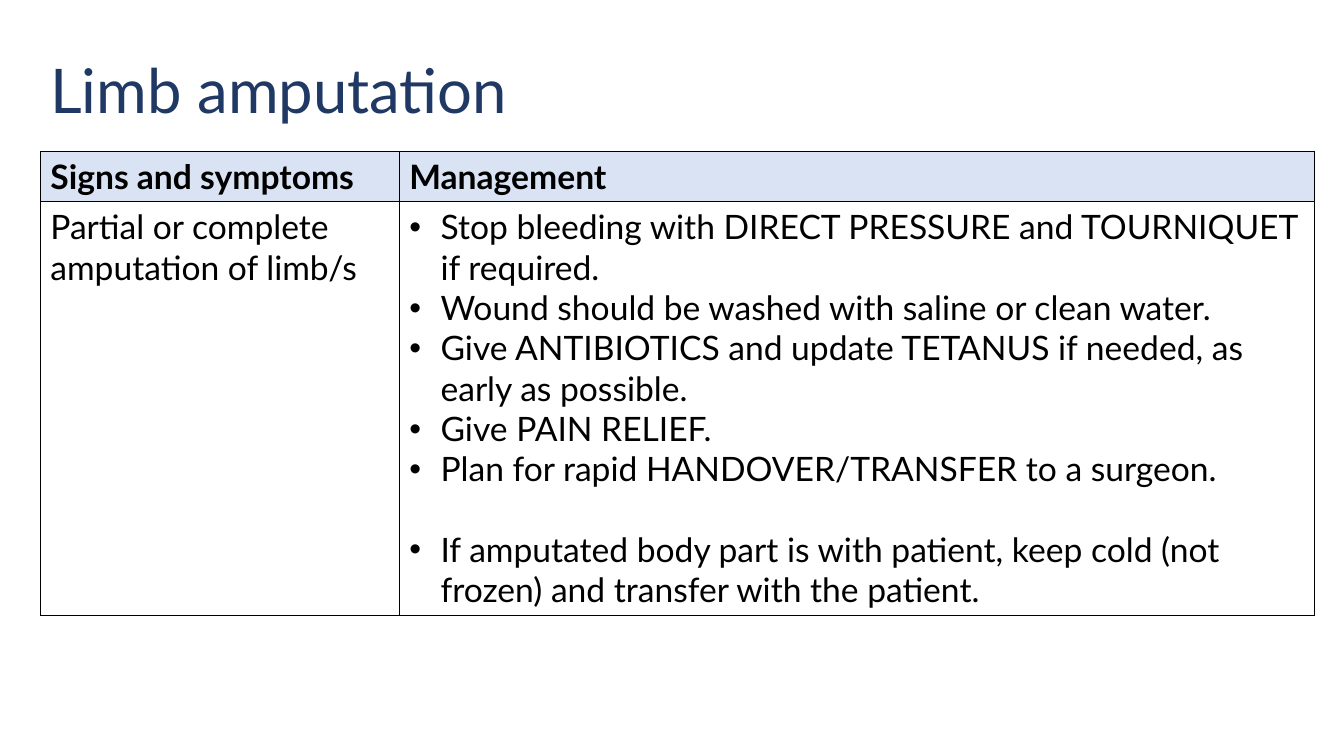
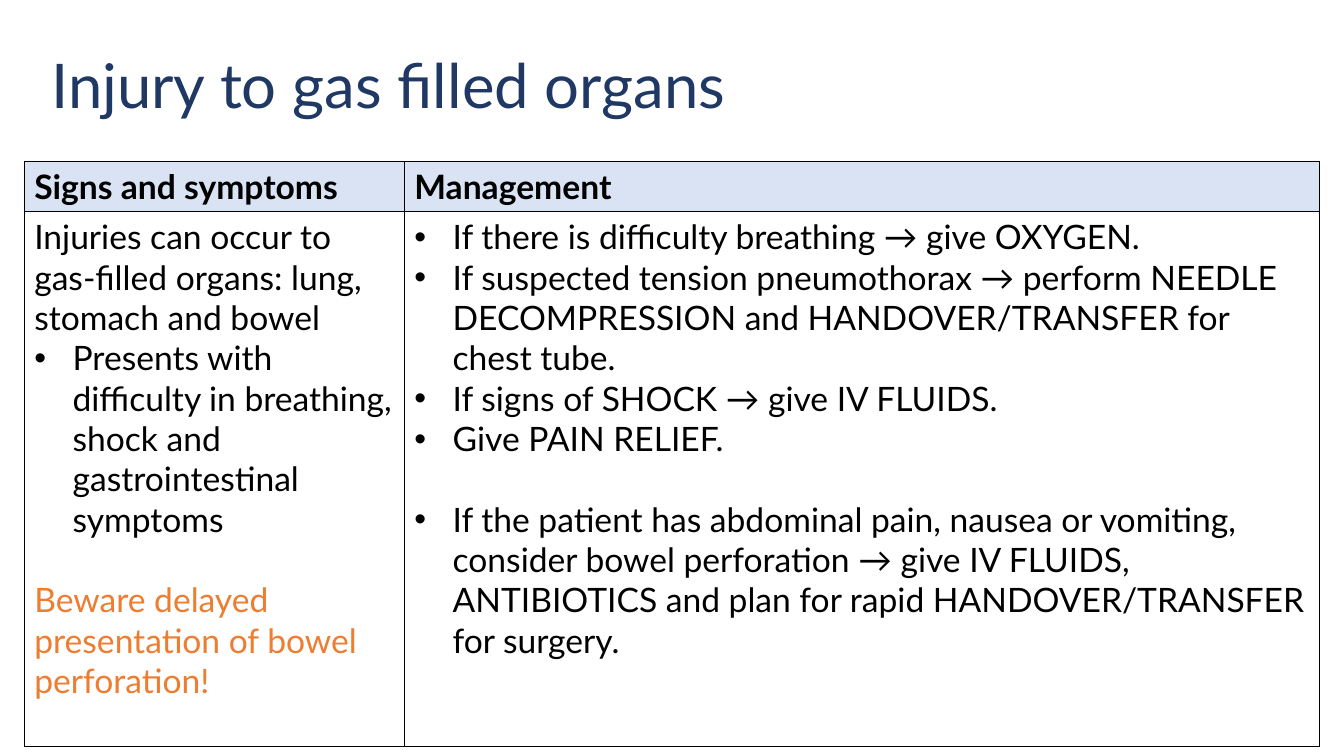
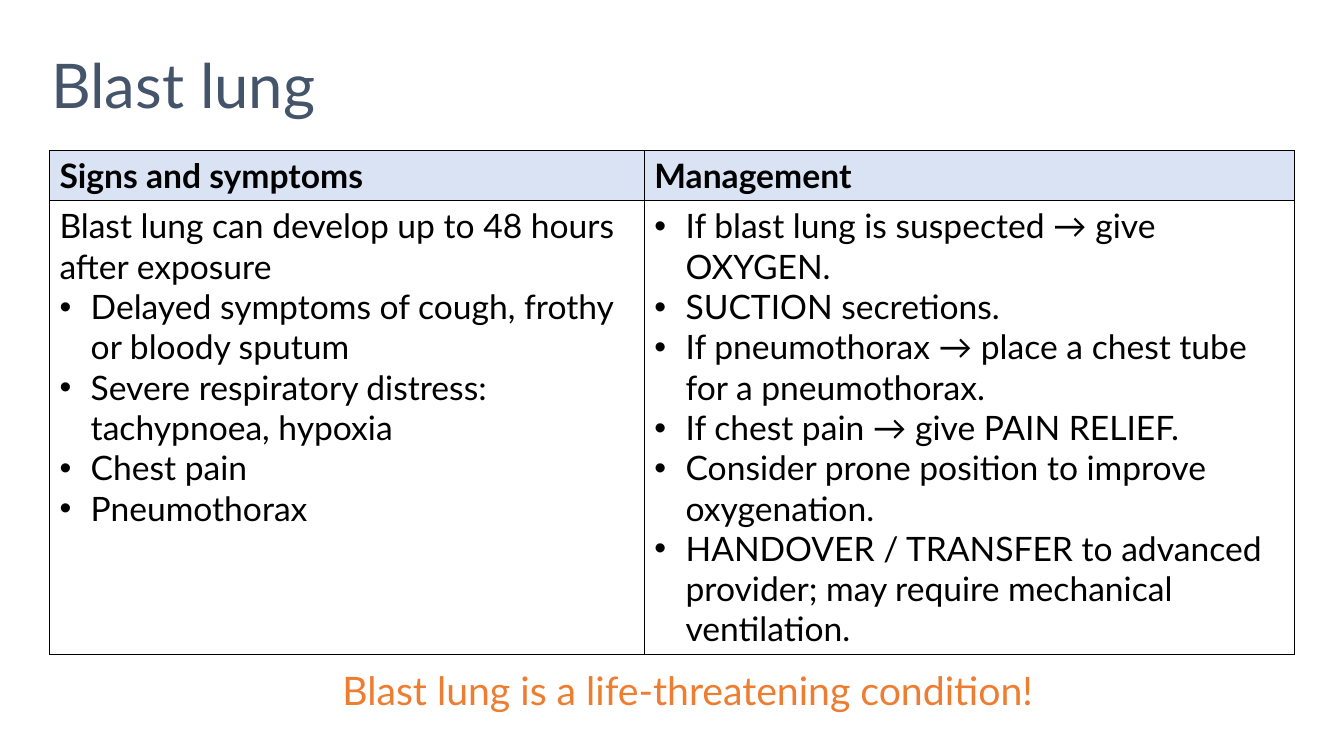
"""Builds three slides on blast injuries: signs, symptoms and management."""
from lxml.etree import SubElement
from pptx import Presentation
from pptx.dml.color import RGBColor
from pptx.enum.text import MSO_ANCHOR, PP_ALIGN
from pptx.oxml.ns import qn
from pptx.util import Inches, Pt

FONT = "Lato"
BLACK, NAVY, SLATE, ORANGE = "000000", "203864", "44546A", "ED7D31"
HEADER_FILL = "DAE3F3"
BODY_SIZE = 24
BLANK_LINE = Pt(BODY_SIZE * 1.2)
HEADER_HEIGHT = 0.5
HEADERS = ("Signs and symptoms", "Management")
PLAIN, BULLET, SPACED_BULLET, WARNING = range(4)

SLIDES = [
    {
        "title": "Limb amputation", "title_at": (0.4, 0.2), "title_color": NAVY,
        "table_at": (0.4, 1.5), "columns": (3.56, 9.08), "height": 4.6, "indent": 0.31,
        "cells": (
            [("Partial or complete amputation of limb/s", PLAIN)],
            [
                ("Stop bleeding with DIRECT PRESSURE and TOURNIQUET if required.", BULLET),
                ("Wound should be washed with saline or clean water.", BULLET),
                ("Give ANTIBIOTICS and update TETANUS if needed, as early as possible.", BULLET),
                ("Give PAIN RELIEF.", BULLET),
                ("Plan for rapid HANDOVER/TRANSFER to a surgeon.", BULLET),
                ("If amputated body part is with patient, keep cold (not frozen) "
                 "and transfer with the patient.", SPACED_BULLET),
            ],
        ),
    },
    {
        "title": "Injury to gas filled organs", "title_at": (0.41, 0.15), "title_color": NAVY,
        "table_at": (0.24, 1.6), "columns": (3.77, 9.08), "height": 5.8, "indent": 0.38,
        "cells": (
            [
                ("Injuries can occur to gas-filled organs: lung, stomach and bowel", PLAIN),
                ("Presents with difficulty in breathing, shock and gastrointestinal symptoms", BULLET),
                ("Beware delayed presentation of bowel perforation!", WARNING),
            ],
            [
                ("If there is difficulty breathing → give OXYGEN.", BULLET),
                ("If suspected tension pneumothorax → perform NEEDLE DECOMPRESSION "
                 "and HANDOVER/TRANSFER for chest tube.", BULLET),
                ("If signs of SHOCK → give IV FLUIDS.", BULLET),
                ("Give PAIN RELIEF.", BULLET),
                ("If the patient has abdominal pain, nausea or vomiting, consider bowel "
                 "perforation → give IV FLUIDS, ANTIBIOTICS and plan for rapid "
                 "HANDOVER/TRANSFER for surgery.", SPACED_BULLET),
            ],
        ),
    },
    {
        "title": "Blast lung", "title_at": (0.41, 0.15), "title_color": SLATE,
        "table_at": (0.49, 1.49), "columns": (5.9, 6.45), "height": 5, "indent": 0.31,
        "cells": (
            [
                ("Blast lung can develop up to 48 hours after exposure", PLAIN),
                ("Delayed symptoms of cough, frothy or bloody sputum", BULLET),
                ("Severe respiratory distress: tachypnoea, hypoxia", BULLET),
                ("Chest pain", BULLET),
                ("Pneumothorax", BULLET),
            ],
            [
                ("If blast lung is suspected → give OXYGEN.", BULLET),
                ("SUCTION secretions.", BULLET),
                ("If pneumothorax → place a chest tube for a pneumothorax.", BULLET),
                ("If chest pain → give PAIN RELIEF.", BULLET),
                ("Consider prone position to improve oxygenation.", BULLET),
                ("HANDOVER / TRANSFER to advanced provider; may require mechanical ventilation.", BULLET),
            ],
        ),
    },
]


def write(paragraph, text, size, color, bold=False):
    paragraph.text = text
    for run in paragraph.runs:
        run.font.name = FONT
        run.font.size = Pt(size)
        run.font.bold = bold
        run.font.color.rgb = RGBColor.from_string(color)


def add_borders(cell):
    properties = cell._tc.get_or_add_tcPr()
    for side in ("lnL", "lnR", "lnT", "lnB"):
        line = SubElement(properties, qn(f"a:{side}"), w=str(Pt(0.5)))
        fill = SubElement(line, qn("a:solidFill"))
        SubElement(fill, qn("a:srgbClr"), val=BLACK)


presentation = Presentation()
presentation.slide_width = Inches(13.33)
presentation.slide_height = Inches(7.5)

for content in SLIDES:
    slide = presentation.slides.add_slide(presentation.slide_layouts[6])

    left, top = content["title_at"]
    title = slide.shapes.add_textbox(Inches(left), Inches(top), Inches(11.5), Inches(1.45))
    title.text_frame.word_wrap = True
    title.text_frame.vertical_anchor = MSO_ANCHOR.MIDDLE
    paragraph = title.text_frame.paragraphs[0]
    write(paragraph, content["title"], 44, content["title_color"])
    paragraph.line_spacing = 0.9

    left, top = content["table_at"]
    widths = content["columns"]
    table = slide.shapes.add_table(
        2, 2, Inches(left), Inches(top), Inches(sum(widths)), Inches(content["height"])
    ).table
    table.horz_banding = False
    table.rows[0].height = Inches(HEADER_HEIGHT)
    table.rows[1].height = Inches(content["height"] - HEADER_HEIGHT)

    for index, (width, header, entries) in enumerate(zip(widths, HEADERS, content["cells"])):
        table.columns[index].width = Inches(width)
        header_cell, body_cell = table.cell(0, index), table.cell(1, index)
        add_borders(header_cell)
        add_borders(body_cell)
        header_cell.fill.solid()
        header_cell.fill.fore_color.rgb = RGBColor.from_string(HEADER_FILL)
        body_cell.fill.background()
        write(header_cell.text_frame.paragraphs[0], header, BODY_SIZE, BLACK, bold=True)

        text_frame = body_cell.text_frame
        for position, (text, style) in enumerate(entries):
            paragraph = text_frame.add_paragraph() if position else text_frame.paragraphs[0]
            write(paragraph, text, BODY_SIZE, ORANGE if style == WARNING else BLACK)
            if style in (BULLET, SPACED_BULLET):
                properties = paragraph._p.get_or_add_pPr()
                properties.set("marL", str(Inches(content["indent"])))
                properties.set("indent", str(-Inches(content["indent"])))
                SubElement(properties, qn("a:buFont"), typeface="Arial")
                SubElement(properties, qn("a:buChar"), char="•")
            if style in (SPACED_BULLET, WARNING):
                paragraph.space_before = BLANK_LINE

warning = slide.shapes.add_textbox(Inches(3.18), Inches(6.56), Inches(7.28), Inches(0.57))
warning.text_frame.word_wrap = True
paragraph = warning.text_frame.paragraphs[0]
write(paragraph, "Blast lung is a life-threatening condition!", 28, ORANGE)
paragraph.alignment = PP_ALIGN.CENTER

presentation.save("out.pptx")
